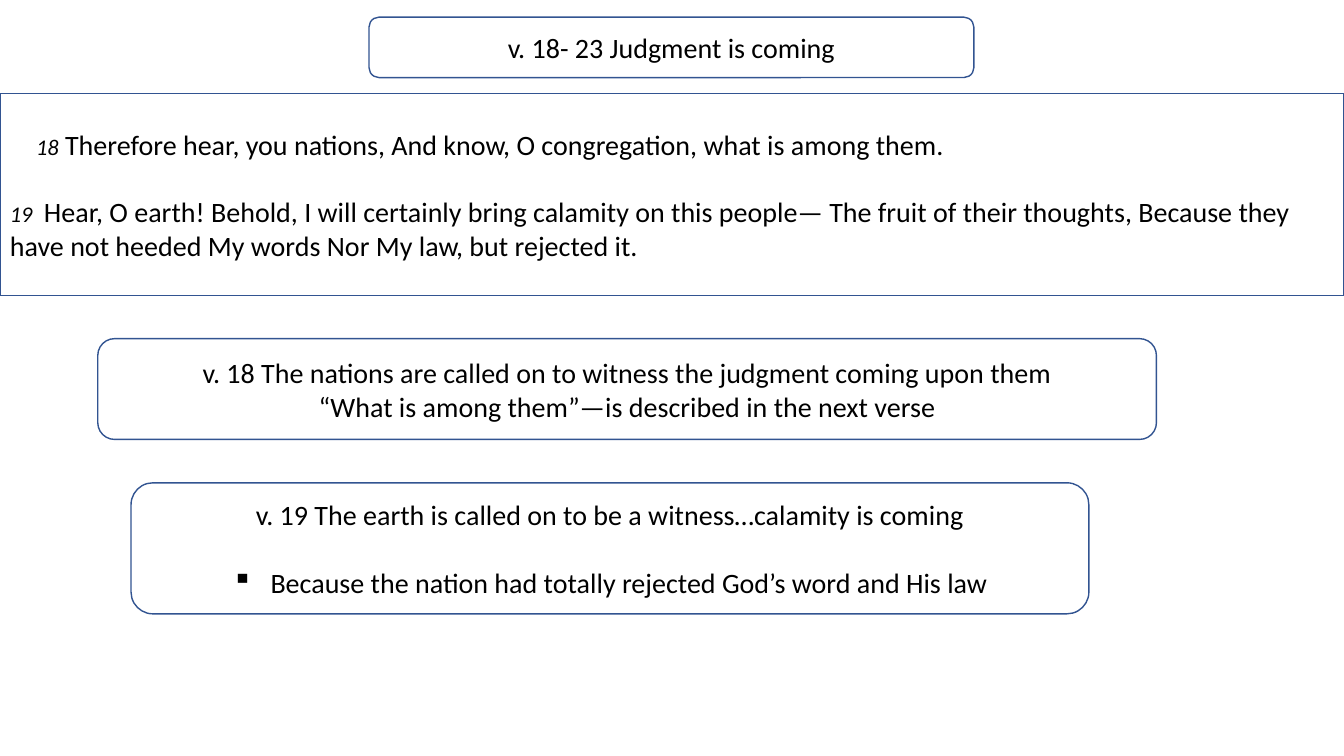
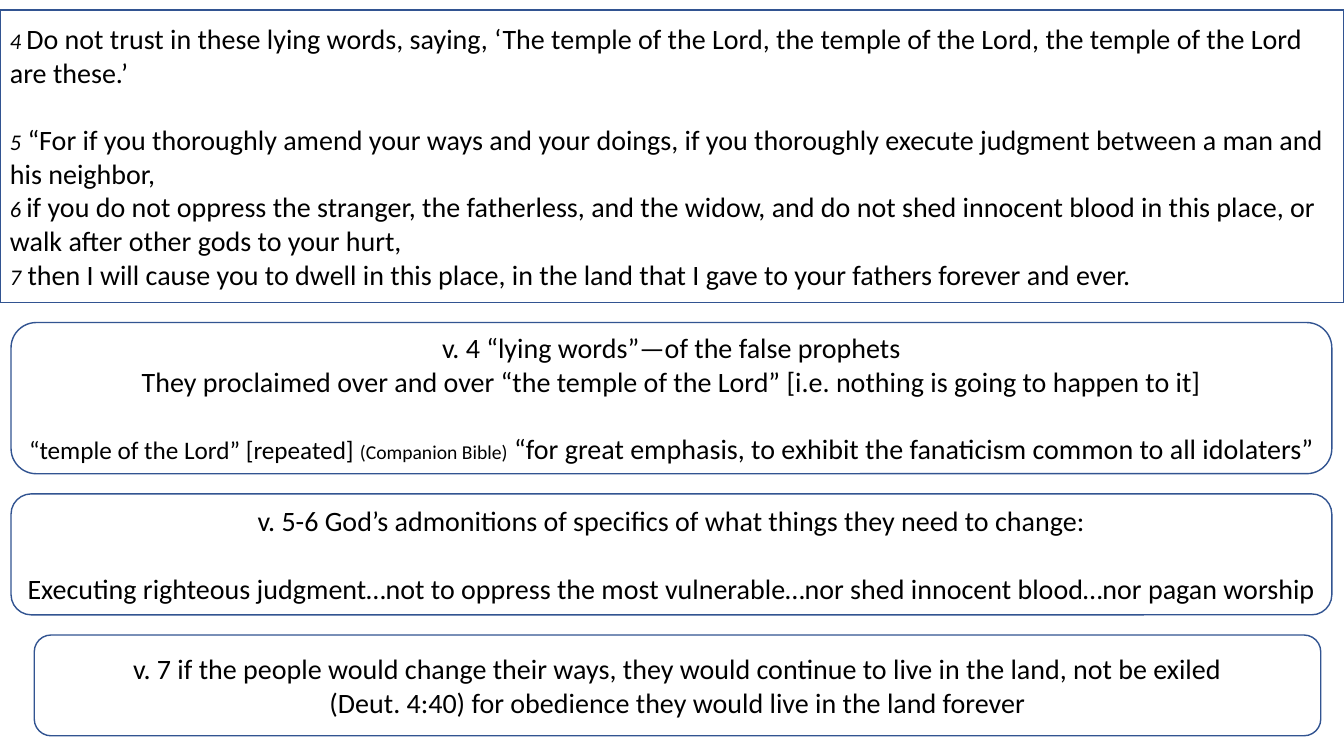
from lxml import etree
from pptx import Presentation
from pptx import util as u
from pptx.dml.color import RGBColor
from pptx.enum import shapes, text
from pptx.oxml import ns

# Shared look
WIDTH, HEIGHT = 13.33, 7.5
ROWS = 75
STEP = HEIGHT / ROWS  # one grid step, both across and down
COLUMNS = WIDTH / STEP
FONT = "Calibri"
INK, PAPER, OUTLINE = "000000", "FFFFFF", "325491"
BODY, NUMBER = 20, 16
BLANK_LINE = 24  # points between separated paragraphs


def color(hex_text):
    return RGBColor.from_string(hex_text)


def grid(steps):
    return u.Inches(round(steps * STEP, 2))


def line(*runs, gap=0, first_indent=0, bullet=None):
    """Describe one paragraph; a run is a string or (string, format)."""
    return {"runs": runs, "gap": gap, "first_indent": first_indent, "bullet": bullet}


def verse(number, words, **layout):
    return line((number, {"size": NUMBER, "italic": True}), words, **layout)


# Text
def add_run(paragraph, words, size=BODY, italic=False, ink=INK):
    run = paragraph.add_run()
    run.text = words
    run.font.name = FONT
    run.font.size = u.Pt(size)
    run.font.italic = italic
    run.font.color.rgb = color(ink)


def set_indent(paragraph, margin, first, bullet=None):
    properties = paragraph._p.get_or_add_pPr()
    properties.set("marL", str(grid(margin)))
    properties.set("indent", str(grid(first)))
    if bullet:
        mark = etree.SubElement(properties, ns.qn("a:buChar"))
        mark.set("char", bullet)


def write(frame, lines, align):
    frame.word_wrap = True
    frame.vertical_anchor = text.MSO_ANCHOR.MIDDLE
    for index, spec_line in enumerate(lines):
        paragraph = frame.paragraphs[0] if index == 0 else frame.add_paragraph()
        paragraph.alignment = align
        if spec_line["bullet"]:
            set_indent(paragraph, 3.8, -3.8, spec_line["bullet"])
        elif spec_line["first_indent"]:
            set_indent(paragraph, 0, spec_line["first_indent"])
        if spec_line["gap"]:
            paragraph.space_before = u.Pt(spec_line["gap"])
        for run in spec_line["runs"]:
            words, style = (run, {}) if isinstance(run, str) else run
            add_run(paragraph, words, **style)


# Boxes: each returns the row of its lower edge
def add_box(slide, outline, left, top, width, height, lines, align):
    box = slide.shapes.add_shape(outline, grid(left), grid(top), grid(width), grid(height))
    box.shadow.inherit = False
    box.fill.solid()
    box.fill.fore_color.rgb = color(PAPER)
    box.line.color.rgb = color(OUTLINE)
    box.line.width = u.Pt(1)
    write(box.text_frame, lines, align)
    return top + height


def scripture(slide, top, height, *lines):
    return add_box(slide, shapes.MSO_SHAPE.RECTANGLE, 0, top, COLUMNS, height,
                   lines, text.PP_ALIGN.LEFT)


def comment(slide, top, width, height, *lines, left=None):
    if left is None:
        left = (COLUMNS - width) / 2
    return add_box(slide, shapes.MSO_SHAPE.ROUNDED_RECTANGLE, left, top, width, height,
                   lines, text.PP_ALIGN.CENTER)


# Slides
def judgment_slide(slide):
    spacing = 4.3
    comment(slide, 1.7, 60, 6, line("v. 18- 23 Judgment is coming"))
    bottom = scripture(
        slide, 9.3, 20,
        verse("18", " Therefore hear, you nations, And know, O congregation, "
              "what is among them.", first_indent=2.6),
        verse("19 ", " Hear, O earth! Behold, I will certainly bring calamity on this people— "
              "The fruit of their thoughts, Because they have not heeded My words "
              "Nor My law, but rejected it.", gap=BLANK_LINE))
    bottom = comment(
        slide, bottom + spacing, 105, 10,
        line("v. 18 The nations are called on to witness the judgment coming upon them"),
        line("“What is among them”—is described in the next verse"), left=9.7)
    comment(
        slide, bottom + spacing, 95, 13,
        line("v. 19 The earth is called on to be a witness…calamity is coming"),
        line("Because the nation had totally rejected God’s word and His law",
             gap=BLANK_LINE, bullet="▪"), left=13)


def temple_slide(slide):
    spacing = 2
    bottom = scripture(
        slide, 1, 29,
        verse("4 ", "Do not trust in these lying words, saying, ‘The temple of the Lord, "
              "the temple of the Lord, the temple of the Lord are these.’"),
        verse("5", " “For if you thoroughly amend your ways and your doings, if you "
              "thoroughly execute judgment between a man and his neighbor,", gap=BLANK_LINE),
        verse("6 ", "if you do not oppress the stranger, the fatherless, and the widow, "
              "and do not shed innocent blood in this place, or walk after other gods "
              "to your hurt,"),
        verse("7", " then I will cause you to dwell in this place, in the land that I gave "
              "to your fathers forever and ever."))
    bottom = comment(
        slide, bottom + spacing, 131, 15,
        line("v. 4 “lying words”—of the false prophets"),
        line("They proclaimed over and over “the temple of the Lord” "
             "[i.e. nothing is going to happen to it]"),
        line(("“temple of the Lord” [repeated] ", {"size": 18}),
             ("(Companion Bible)", {"size": 14}),
             " “for great emphasis, to exhibit the fanaticism common to all idolaters”",
             gap=BLANK_LINE))
    bottom = comment(
        slide, bottom + spacing, 131, 12,
        line("v. 5-6 God’s admonitions of specifics of what things they need to change:"),
        line("Executing righteous judgment…not to oppress the most vulnerable…"
             "nor shed innocent blood…nor pagan worship", gap=BLANK_LINE))
    comment(
        slide, bottom + spacing, 127.6, 10,
        line("v. 7 if the people would change their ways, they would continue to live "
             "in the land, not be exiled"),
        line("(Deut. 4:40) for obedience they would live in the land forever"), left=3.4)


def main():
    deck = Presentation()
    deck.slide_width, deck.slide_height = u.Inches(WIDTH), u.Inches(HEIGHT)
    blank = deck.slide_layouts[6]
    for build in (judgment_slide, temple_slide):
        build(deck.slides.add_slide(blank))
    deck.save("out.pptx")


if __name__ == "__main__":
    main()
